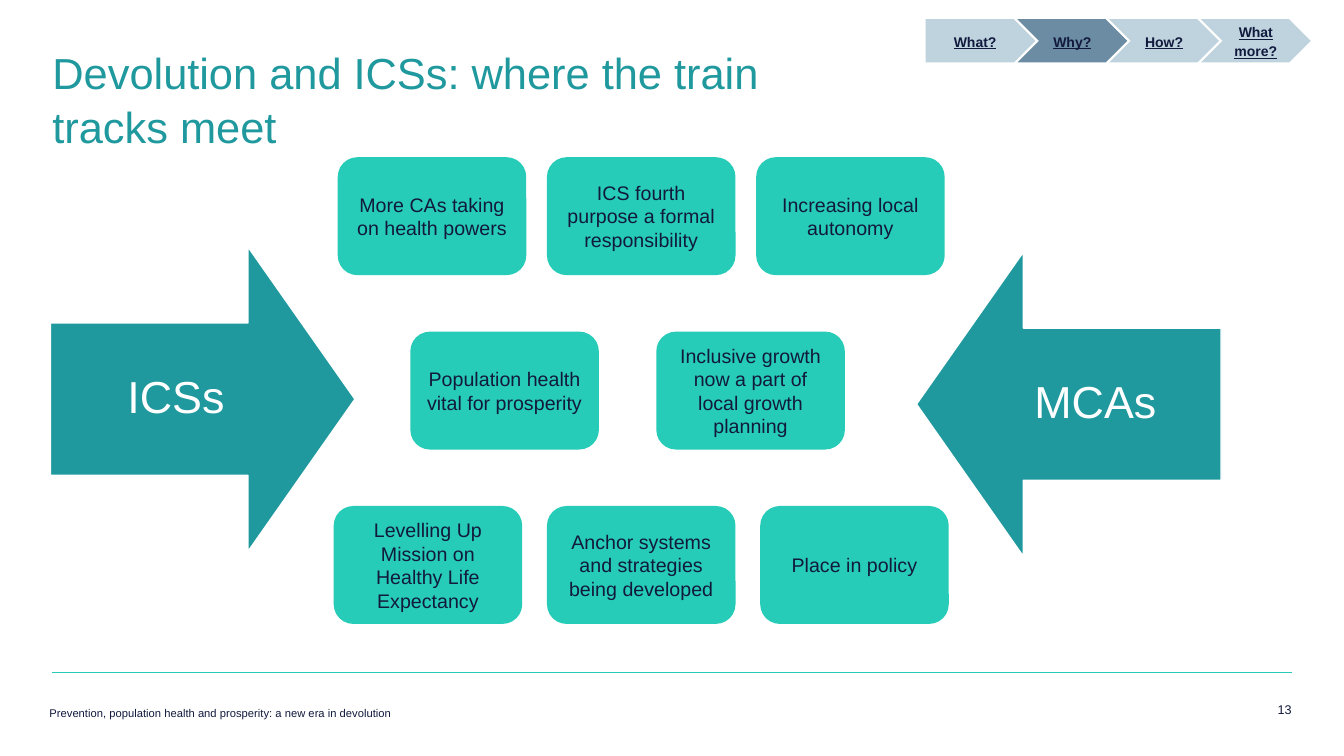
from pptx import Presentation
from pptx.dml.color import RGBColor
from pptx.enum.shapes import MSO_CONNECTOR, MSO_SHAPE
from pptx.enum.text import MSO_ANCHOR, PP_ALIGN
from pptx.oxml.ns import qn
from pptx.util import Inches, Pt
from lxml import etree

LEFT, CENTER, RIGHT = PP_ALIGN.LEFT, PP_ALIGN.CENTER, PP_ALIGN.RIGHT
TOP, MIDDLE = MSO_ANCHOR.TOP, MSO_ANCHOR.MIDDLE
ROUNDED, PENTAGON, CHEVRON = (
    MSO_SHAPE.ROUNDED_RECTANGLE, MSO_SHAPE.PENTAGON, MSO_SHAPE.CHEVRON)

# Content
TEAL, MINT, NAVY, WHITE = "1F999E", "26CCB8", "121A3C", "FFFFFF"
STEP_TEXT, STEP_FILL, STEP_CURRENT = "11193D", "BFD3DE", "6B8CA3"
TITLE = "Devolution and ICSs: where the train tracks meet"
FOOTER = "Prevention, population health and prosperity: a new era in devolution"
PAGE_NUMBER = "13"
STEPS = ["What?", "Why?", "How?", "What more?"]
CURRENT_STEP = "Why?"
# Each row of themes: left edge, distance between left edges, texts
THEME_ROWS = [
    (3.35, 2.075, ["More CAs taking on health powers",
                   "ICS fourth purpose a formal responsibility",
                   "Increasing local autonomy"]),
    (4.07, 2.44, ["Population health vital for prosperity",
                  "Inclusive growth now a part of local growth planning"]),
    (3.31, 2.115, ["Levelling Up Mission on Healthy Life Expectancy",
                   "Anchor systems and strategies being developed",
                   "Place in policy"]),
]
# Each arrow: text, left, top, points right
ARROWS = [("ICSs", 0.5, 2.45, True), ("MCAs", 9.09, 2.5, False)]

# Sizes
THEME_TOP, THEME_PITCH, THEME_WIDTH, THEME_HEIGHT = 1.56, 1.73, 1.87, 1.17
STEP_LEFT, STEP_TOP, STEP_PITCH, STEP_WIDTH, STEP_HEIGHT = 9.18, 0.19, 0.91, 1.09, 0.43
ARROW_SIZE, ARROW_SHAFT = 3.02, 1.96


def color(hex_value):
    return RGBColor.from_string(hex_value)


def write(shape, text, size, hex_value, align=LEFT, anchor=TOP,
          insets=(0, 0, 0, 0), spacing=None, bold=False, underline=False):
    frame = shape.text_frame
    frame.word_wrap = True
    frame.vertical_anchor = anchor
    (frame.margin_left, frame.margin_top,
     frame.margin_right, frame.margin_bottom) = [Inches(inset) for inset in insets]
    paragraph = frame.paragraphs[0]
    paragraph.alignment = align
    if spacing:
        paragraph.line_spacing = spacing
    run = paragraph.add_run()
    run.text = text
    run.font.name = "Arial"
    run.font.size = Pt(size)
    run.font.bold = bold
    run.font.underline = underline
    run.font.color.rgb = color(hex_value)


def paint(shape, fill, line=None):
    shape.shadow.inherit = False
    shape.fill.solid()
    shape.fill.fore_color.rgb = color(fill)
    if line:
        shape.line.color.rgb = color(line)
        shape.line.width = Pt(1)
    else:
        shape.line.fill.background()


def add_box(slide, kind, left, top, width, height, fill):
    shape = slide.shapes.add_shape(
        kind, Inches(left), Inches(top), Inches(width), Inches(height))
    paint(shape, fill)
    return shape


def add_text(slide, left, top, width, height, *args, **options):
    box = slide.shapes.add_textbox(
        Inches(left), Inches(top), Inches(width), Inches(height))
    write(box, *args, **options)


def add_arrow(slide, text, left, top, points_right):
    size, shaft = ARROW_SIZE, ARROW_SHAFT
    outline = [(shaft, size), (shaft, size * 0.75), (0, size * 0.75),
               (0, size * 0.25), (shaft, size * 0.25), (shaft, 0), (size, size / 2)]
    insets = (0.25, 1, 0.78, 1)
    if not points_right:
        outline = [(size - x, y) for x, y in outline]
        insets = (0.78, 1, 0.25, 1)
    points = [(Inches(left + x), Inches(top + y)) for x, y in outline]
    builder = slide.shapes.build_freeform(*points[0])
    builder.add_line_segments(points[1:], close=True)
    arrow = builder.convert_to_shape()
    paint(arrow, TEAL, WHITE)
    write(arrow, text, 32, WHITE, CENTER, MIDDLE, insets, 0.9)


def main():
    presentation = Presentation()
    presentation.slide_width = Inches(13.33)
    presentation.slide_height = Inches(7.5)
    slide = presentation.slides.add_slide(presentation.slide_layouts[6])

    # Title, footer rule, footer and page number
    rule = slide.shapes.add_connector(
        MSO_CONNECTOR.STRAIGHT, Inches(0.52), Inches(6.67), Inches(12.81), Inches(6.67))
    rule.line.color.rgb = color(MINT)
    rule.line.width = Pt(0.75)
    etree.SubElement(rule._element.spPr, qn("a:effectLst"))
    add_text(slide, 0.52, 0.41, 7.27, 1.13, TITLE, 31, TEAL, anchor=MIDDLE, spacing=1.04)
    add_text(slide, 0.49, 7.02, 4.49, 0.13, FOOTER, 8, NAVY, spacing=0.9)
    add_text(slide, 11.93, 6.96, 0.88, 0.24, PAGE_NUMBER, 9, NAVY, RIGHT)

    # Facing arrows
    for arrow in ARROWS:
        add_arrow(slide, *arrow)

    # Themes between the arrows
    for row, (left, pitch, themes) in enumerate(THEME_ROWS):
        for column, theme in enumerate(themes):
            box = add_box(slide, ROUNDED, left + column * pitch,
                          THEME_TOP + row * THEME_PITCH, THEME_WIDTH, THEME_HEIGHT, MINT)
            write(box, theme, 14, NAVY, CENTER, MIDDLE, (0.1, 0.05, 0.1, 0.05))

    # Progress steps
    for index, step in enumerate(STEPS):
        box = add_box(slide, CHEVRON if index else PENTAGON,
                      STEP_LEFT + index * STEP_PITCH, STEP_TOP, STEP_WIDTH, STEP_HEIGHT,
                      STEP_CURRENT if step == CURRENT_STEP else STEP_FILL)
        write(box, step, 10, STEP_TEXT, CENTER, MIDDLE, (0.1, 0.1, 0.1, 0.1), 1.1,
              bold=True, underline=True)

    presentation.save("out.pptx")


if __name__ == "__main__":
    main()
